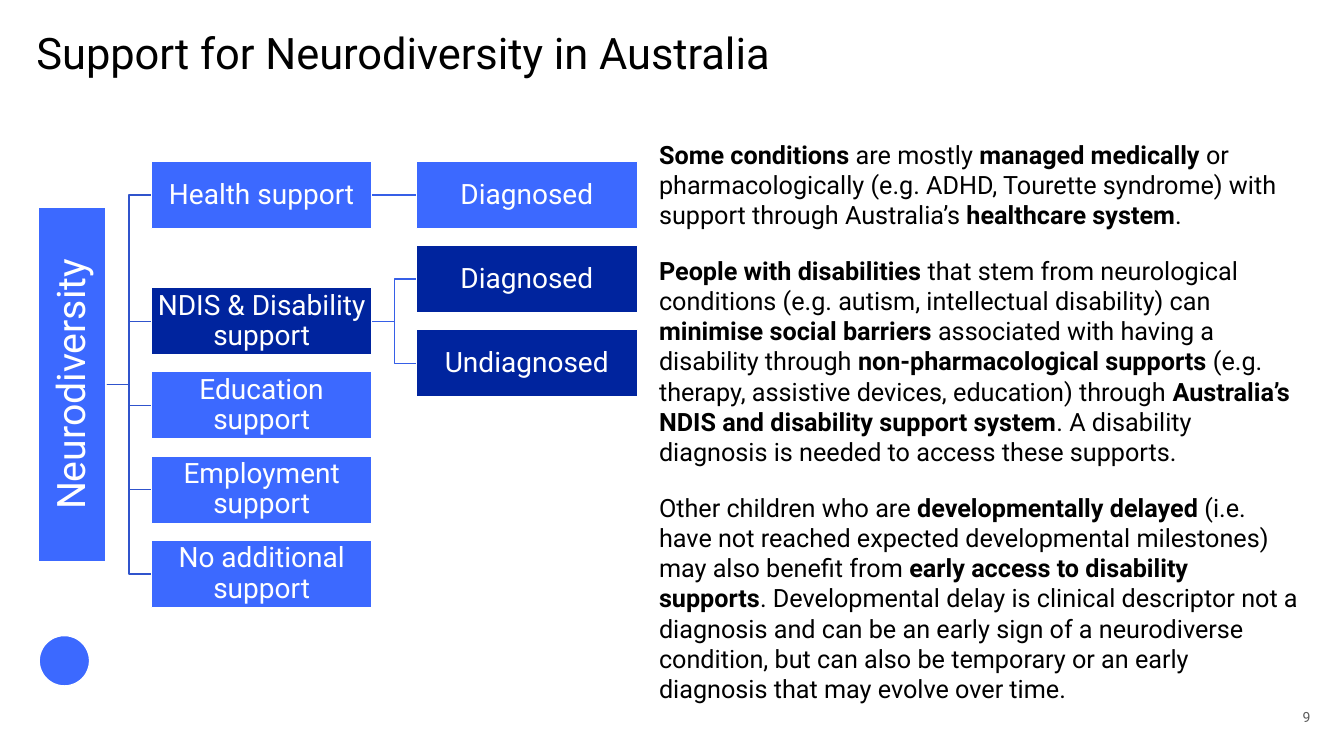
"""Build the slide on support for neurodiversity in Australia."""
import pptx
import pptx.dml.color
import pptx.enum.shapes
import pptx.enum.text
import pptx.oxml.ns
import pptx.util
from lxml import etree

Pt = pptx.util.Pt
Align = pptx.enum.text.PP_ALIGN
Anchor = pptx.enum.text.MSO_ANCHOR
Shape = pptx.enum.shapes.MSO_SHAPE
Link = pptx.enum.shapes.MSO_CONNECTOR

TITLE = "Support for Neurodiversity in Australia"
PAGE = "9"
ROOT = "Neurodiversity"
TREE = [
    ("Health support", 0, "blue", [("Diagnosed", 0)]),
    ("NDIS & Disability support", 1.5, "navy",
     [("Diagnosed", 1), ("Undiagnosed", 2)]),
    ("Education support", 2.5, "blue", []),
    ("Employment support", 3.5, "blue", []),
    ("No additional support", 4.5, "blue", []),
]
BODY = [
    [("Some conditions ", True), ("are mostly ", False),
     ("managed medically ", True),
     ("or pharmacologically (e.g. ADHD, Tourette syndrome) with support "
      "through Australia’s ", False),
     ("healthcare system", True), (".", False)],
    [("People with disabilities ", True),
     ("that stem from neurological conditions (e.g. autism, intellectual "
      "disability) can ", False),
     ("minimise social barriers ", True),
     ("associated with having a disability through ", False),
     ("non-pharmacological supports ", True),
     ("(e.g. therapy, assistive devices, education) through ", False),
     ("Australia’s NDIS and disability support system", True),
     (". A disability diagnosis is needed to access these supports.", False)],
    [("Other children who are ", False), ("developmentally delayed ", True),
     ("(i.e. have not reached expected developmental milestones) may also "
      "benefit from ", False),
     ("early access to disability supports", True),
     (". Developmental delay is clinical descriptor not a diagnosis and can "
      "be an early sign of a neurodiverse condition, but can also be "
      "temporary or an early diagnosis that may evolve over time.", False)],
]
THEME = {
    "font": "Roboto",
    "blue": "3C69FF", "navy": "00249E", "white": "FFFFFF", "black": "000000",
    "grey": "5B5B5B", "stem": "3054CC", "twig": "365FE7",
    "title": 31, "root": 28, "node": 20, "body": 18, "page": 10,
}

LEFT, TOP = 108, 115.2
WIDE, HIGH = 157.8, 48.2
GAP = 31.6
STEP = 60.15
SPAN = 253.4
STUB = 76.2


def tint(name):
    """Return a theme colour."""
    return pptx.dml.color.RGBColor.from_string(THEME[name])


def write(para, text, size, color, bold=False):
    """Add one run to a paragraph."""
    run = para.add_run()
    run.text = text
    font = run.font
    font.name, font.size, font.bold = THEME["font"], Pt(THEME[size]), bold
    font.color.rgb = tint(color)


def inset(frame, side, edge):
    """Wrap the text and set its margins."""
    frame.word_wrap = True
    frame.margin_left = frame.margin_right = Pt(side)
    frame.margin_top = frame.margin_bottom = Pt(edge)


def label(slide, box, side=0, edge=0):
    """Add a text box and return its frame."""
    frame = slide.shapes.add_textbox(*map(Pt, box)).text_frame
    inset(frame, side, edge)
    return frame


def block(slide, kind, box, fill):
    """Add a filled shape with a thin white edge."""
    shape = slide.shapes.add_shape(kind, *map(Pt, box))
    shape.shadow.inherit = False
    shape.fill.solid()
    shape.fill.fore_color.rgb = tint(fill)
    shape.line.color.rgb = tint("white")
    shape.line.width = Pt(1)
    return shape


def node(slide, text, box, fill, size="node"):
    """Add a labelled box of the tree."""
    shape = block(slide, Shape.RECTANGLE, box, fill)
    frame = shape.text_frame
    inset(frame, 1, 1)
    frame.vertical_anchor = Anchor.MIDDLE
    para = frame.paragraphs[0]
    para.alignment, para.line_spacing = Align.CENTER, 0.9
    write(para, text, size, "white")
    return shape


def place(col, row):
    """Return the box of a column and row in the tree."""
    return LEFT + col * (WIDE + GAP), TOP + row * STEP, WIDE, HIGH


def join(slide, start, end, color, kind=Link.ELBOW):
    """Draw a link between two points."""
    line = slide.shapes.add_connector(kind, *map(Pt, start + end))
    line.line.color.rgb = tint(color)
    line.line.width = Pt(1)
    etree.SubElement(line._element.spPr, pptx.oxml.ns.qn("a:effectLst"))
    return line


def draw_tree(slide):
    """Draw the root, its branches and their leaves."""
    mid = TOP + HIGH / 2 + TREE[-1][1] * STEP / 2
    hub = LEFT - GAP - HIGH / 2
    root = node(slide, ROOT, (hub - SPAN / 2, mid - HIGH / 2, SPAN, HIGH),
                "blue", "root")
    root.left = Pt(STUB - HIGH / 2 - SPAN / 2 - 0.3)
    root.rotation = 270
    for text, row, fill, leaves in TREE:
        left, top, wide, high = place(0, row)
        join(slide, (STUB, mid), (left, top + high / 2), "stem")
        branch = node(slide, text, (left, top, wide, high), fill)
        for name, level in leaves:
            box = place(1, level)
            leaf = node(slide, name, box, fill)
            kind = Link.STRAIGHT if level == row else Link.ELBOW
            line = join(slide, (left + wide, top + high / 2),
                        (box[0], box[1] + high / 2), "twig", kind)
            line.begin_connect(branch, 3)
            line.end_connect(leaf, 1)


def main():
    """Build and save the slide."""
    deck = pptx.Presentation()
    deck.slide_width, deck.slide_height = Pt(960), Pt(540)
    slide = deck.slides.add_slide(deck.slide_layouts[6])

    block(slide, Shape.OVAL, (28, 454, 36, 36), "blue")

    para = label(slide, (26, 23, 531, 97)).paragraphs[0]
    para.line_spacing = 0.9
    write(para, TITLE, "title", "black")

    draw_tree(slide)

    frame = label(slide, (903, 504, 33, 14.4))
    frame.vertical_anchor = Anchor.BOTTOM
    frame.paragraphs[0].alignment = Align.RIGHT
    write(frame.paragraphs[0], PAGE, "page", "grey")

    frame = label(slide, (463.7, 95.8, 471, 392.4), 7.2, 3.6)
    for index, parts in enumerate(BODY):
        para = frame.add_paragraph() if index else frame.paragraphs[0]
        para.space_before, para.space_after = Pt(6), Pt(12)
        for text, bold in parts:
            write(para, text, "body", "black", bold)

    deck.save("out.pptx")


if __name__ == "__main__":
    main()
